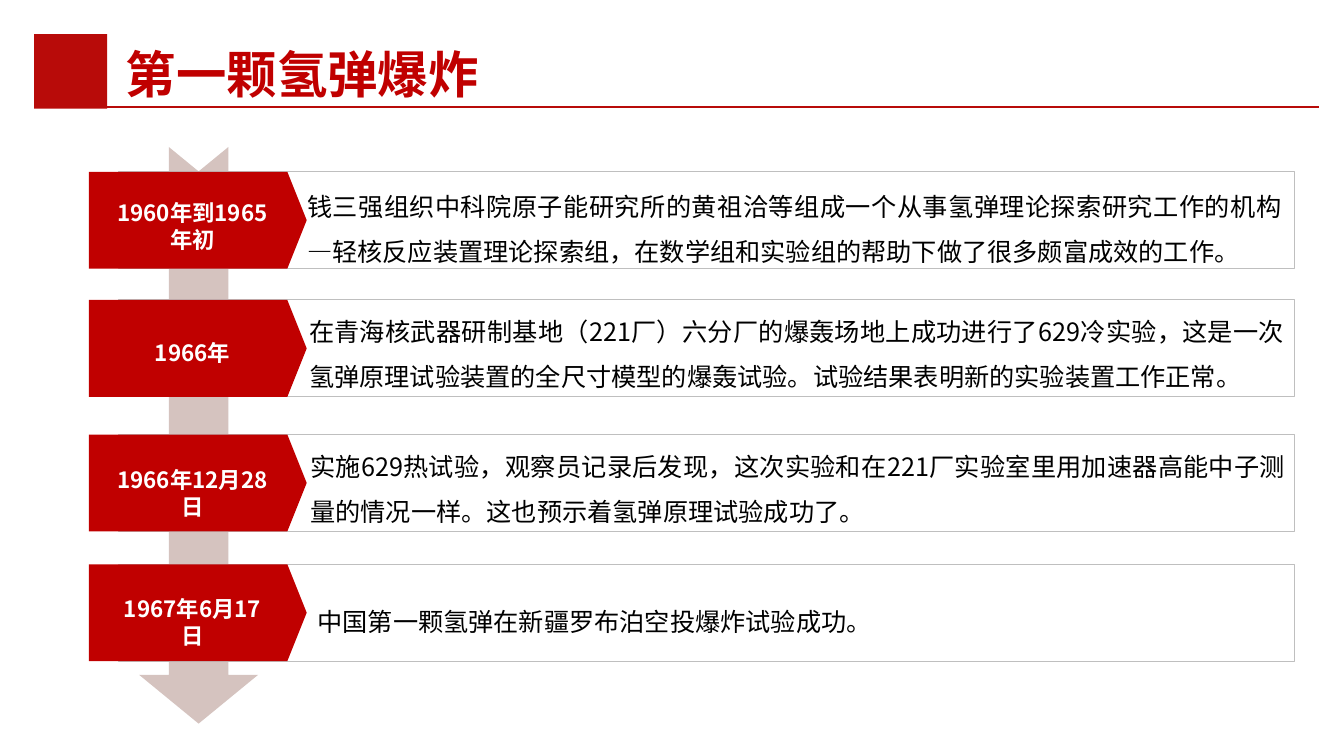
"""Build a timeline slide about the first hydrogen bomb test."""
from lxml.etree import SubElement
from pptx import Presentation
from pptx.dml.color import RGBColor
from pptx.enum.shapes import MSO_CONNECTOR, MSO_SHAPE
from pptx.enum.text import MSO_ANCHOR, MSO_AUTO_SIZE, PP_ALIGN
from pptx.oxml.ns import qn
from pptx.util import Cm, Pt

FONT = "Noto Sans CJK SC"
RED = RGBColor(0xC0, 0x00, 0x00)
DEEP = RGBColor(0xB8, 0x0B, 0x09)
BROWN = RGBColor(0x59, 0x13, 0x00)
GREY = RGBColor(0xBF, 0xBF, 0xBF)
BLACK = RGBColor(0x00, 0x00, 0x00)
WHITE = RGBColor(0xFF, 0xFF, 0xFF)

STEPS = [
    (4.33, "1960年到1965年初", 4.9, 7.49, 4.32,
     "钱三强组织中科院原子能研究所的黄祖洽等组成一个从事氢弹理论探索研究工作的机构"
     "—轻核反应装置理论探索组，在数学组和实验组的帮助下做了很多颇富成效的工作。"),
    (7.56, "1966年", 8.42, 7.54, 7.47,
     "在青海核武器研制基地（221厂）六分厂的爆轰场地上成功进行了629冷实验，这是一"
     "次氢弹原理试验装置的全尺寸模型的爆轰试验。试验结果表明新的实验装置工作正常。"),
    (10.95, "1966年12月28日", 11.61, 7.57, 10.88,
     "实施629热试验，观察员记录后发现，这次实验和在221厂实验室里用加速器高能中子"
     "测量的情况一样。这也预示着氢弹原理试验成功了。"),
    (14.22, "1967年6月17日", 14.86, 7.75, 14.79,
     "中国第一颗氢弹在新疆罗布泊空投爆炸试验成功。"),
]


def place(item, left, top, width, height):
    item.left, item.top = Cm(left), Cm(top)
    item.width, item.height = Cm(width), Cm(height)


def write(frame, text, size, color, pitch, align, bold=False):
    frame.auto_size = MSO_AUTO_SIZE.NONE
    frame.vertical_anchor = MSO_ANCHOR.TOP
    para = frame.paragraphs[0]
    para.alignment = align
    para.line_spacing = Pt(pitch)
    para.space_before = Pt(0)
    run = para.add_run()
    run.text = text
    font = run.font
    font.name, font.size, font.bold = FONT, Pt(size), bold
    font.color.rgb = color
    SubElement(run._r.get_or_add_rPr(), qn("a:ea"), typeface=FONT)


def add_text(slide, box, *style):
    frame = slide.shapes.add_textbox(*map(Cm, box)).text_frame
    frame.word_wrap = True
    write(frame, *style)


def add_block(slide, kind, box, fill=None, edge=None, adjust=()):
    block = slide.shapes.add_shape(kind, *map(Cm, box))
    block.shadow.inherit = False
    for index, value in enumerate(adjust):
        block.adjustments[index] = value
    if fill is None:
        block.fill.background()
    else:
        block.fill.solid()
        block.fill.fore_color.rgb = fill
    if edge is None:
        block.line.fill.background()
    else:
        block.line.color.rgb = edge
        block.line.width = Pt(0.75)
    return block


def add_head(slide):
    add_block(slide, MSO_SHAPE.RECTANGLE, (0.86, 0.86, 1.84, 1.88), DEEP)
    rule = slide.shapes.add_connector(
        MSO_CONNECTOR.STRAIGHT, Cm(2.7), Cm(2.7), Cm(33.25), Cm(2.7))
    rule.line.color.rgb = DEEP
    rule.line.width = Pt(1.5)
    SubElement(rule._element.spPr, qn("a:effectLst"))
    title = slide.shapes.title
    place(title, 2.92, 0.96, 12.17, 1.8)
    title.text_frame.word_wrap = False
    write(title.text_frame, "第一颗氢弹爆炸", 36, RED, 43, PP_ALIGN.LEFT, True)


def add_arrow(slide):
    arrow = add_block(slide, MSO_SHAPE.NOTCHED_RIGHT_ARROW,
                      (-2.26, 9.47, 14.53, 3), BROWN, adjust=(0.5, 0.41))
    arrow.rotation = 90
    tint = arrow._element.spPr.find(".//" + qn("a:srgbClr"))
    SubElement(tint, qn("a:alpha"), val="25000")


def add_step(slide, top, date, row, left, line, story):
    add_block(slide, MSO_SHAPE.RECTANGLE, (3, top, 29.62, 2.44), edge=GREY)
    add_text(slide, (left, line, 25.07, 2.4),
             story, 18, BLACK, 32.1, PP_ALIGN.JUSTIFY)
    add_block(slide, MSO_SHAPE.PENTAGON, (2.24, top, 5.49, 2.44), RED,
              adjust=(0.2,))
    add_text(slide, (2.6, row, 4.5, 1.5),
             date, 16, WHITE, 19.3, PP_ALIGN.CENTER, True)


def main():
    deck = Presentation()
    deck.slide_width, deck.slide_height = Cm(33.87), Cm(19.05)
    slide = deck.slides.add_slide(deck.slide_layouts[5])
    add_head(slide)
    add_arrow(slide)
    for step in STEPS:
        add_step(slide, *step)
    deck.save("out.pptx")


if __name__ == "__main__":
    main()
